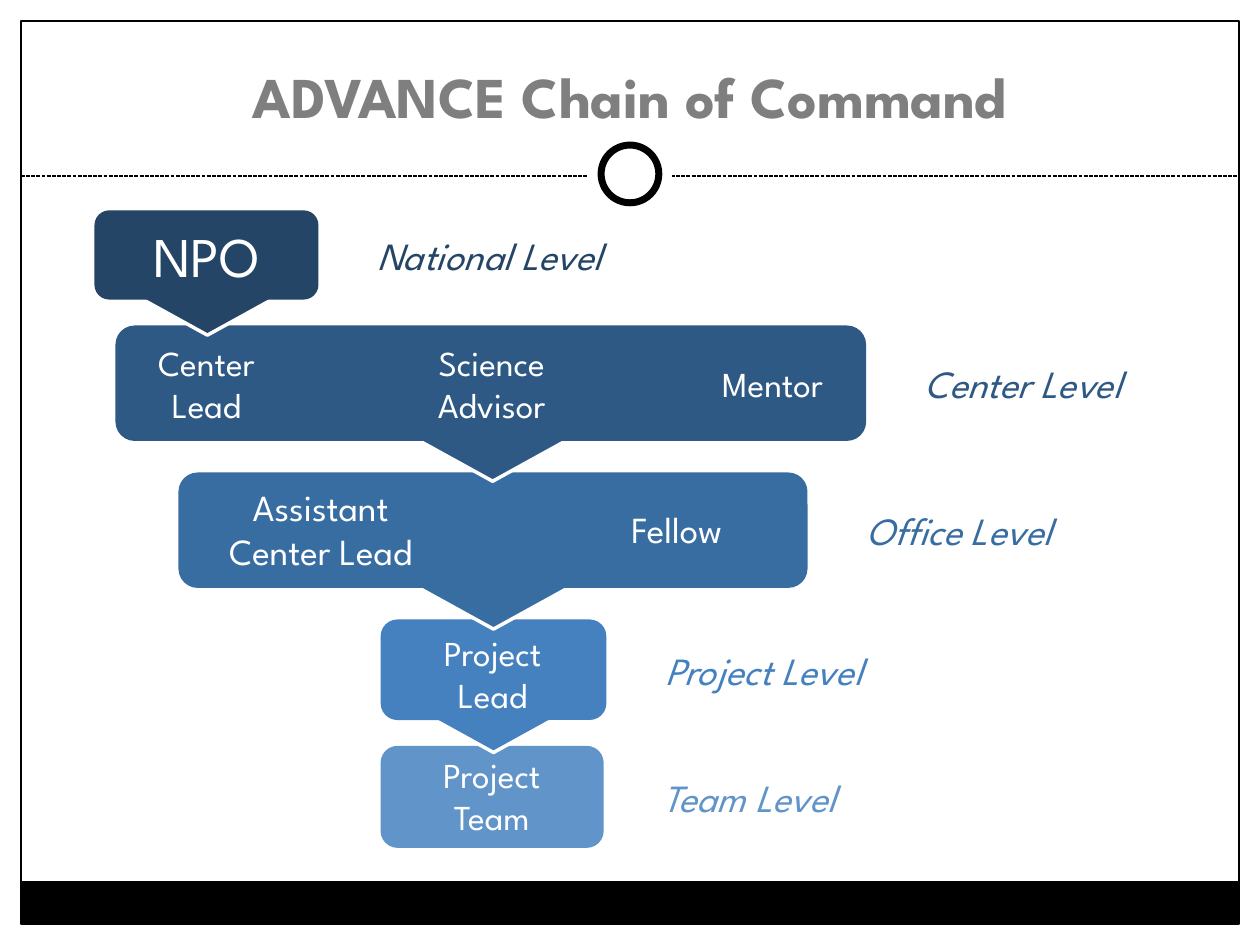
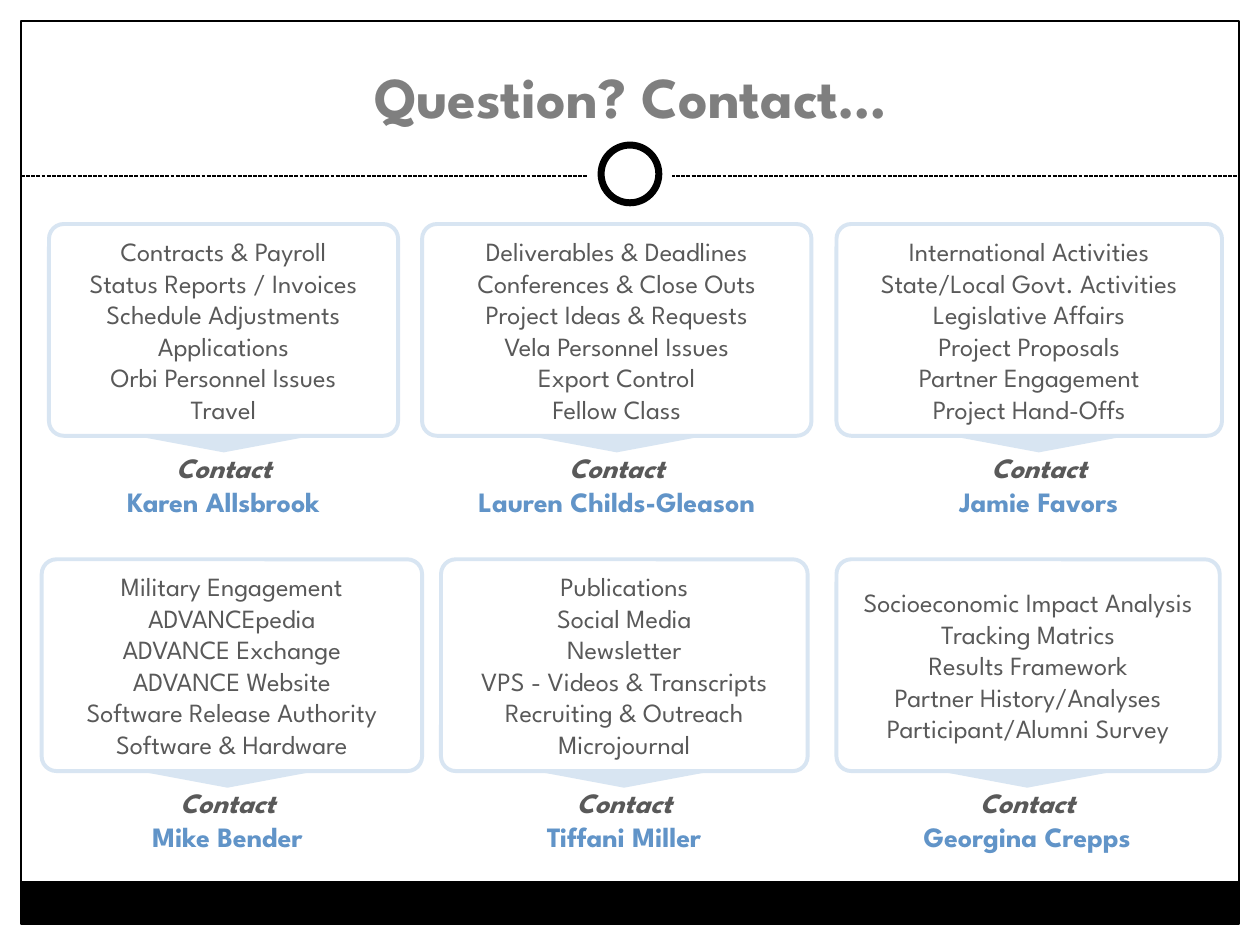
from pptx import Presentation
from pptx.dml.color import RGBColor
from pptx.enum.dml import MSO_LINE
from pptx.enum.shapes import MSO_CONNECTOR, MSO_SHAPE as Preset
from pptx.enum.text import MSO_ANCHOR as Anchor, PP_ALIGN as Align
from pptx.oxml.ns import qn
from pptx.util import Pt
from lxml.etree import SubElement

FONT = "League Spartan"
WHITE, BLACK = RGBColor(255, 255, 255), RGBColor(0, 0, 0)
TITLE_GREY, TEXT_GREY = RGBColor(0x7F, 0x7F, 0x7F), RGBColor(0x59, 0x59, 0x59)
NAVY, DEEP = RGBColor(0x24, 0x45, 0x66), RGBColor(0x2E, 0x59, 0x84)
MID, BRIGHT = RGBColor(0x38, 0x6D, 0xA2), RGBColor(0x44, 0x81, 0xBE)
SOFT, PALE = RGBColor(0x61, 0x94, 0xC8), RGBColor(0xD8, 0xE5, 0xF2)
WIDTH, HEIGHT, MARGIN = 720, 540, 12

# Content: box is (left, top, width, height), pointer is (centre, top),
# a role is (text, left, width)
CHAIN_TITLE = "ADVANCE Chain of Command"
LEVELS = [
    dict(label="National Level", colour=NAVY, box=(54, 120.2, 128, 51),
         pointer=(118.5, 162), size=32, middle=145.5, roles=[("NPO", 66, 104)]),
    dict(label="Center Level", colour=DEEP, box=(66, 186, 429, 66),
         pointer=(281.5, 245.5), size=20, middle=219,
         roles=[("Center Lead", 66, 104), ("Science Advisor", 229, 104),
                ("Mentor", 389.5, 104)]),
    dict(label="Office Level", colour=MID, box=(102, 270, 359.5, 66),
         pointer=(282, 330), size=21, middle=302,
         roles=[("Assistant Center Lead", 108, 150.5), ("Fellow", 311.5, 150.5)]),
    dict(label="Project Level", colour=BRIGHT, box=(217.5, 354, 129, 57.5),
         pointer=(282, 400.5), size=20, middle=385,
         roles=[("Project Lead", 229.5, 104)]),
    dict(label="Team Level", colour=SOFT, box=(217.5, 426.2, 127.5, 58.3),
         pointer=None, size=20, middle=454.7, roles=[("Project Team", 229, 104)]),
]

# A card is (contact, left, width, pointer centre, topics)
CONTACT_TITLE = "Question? Contact…"
CARD_ROWS = [
    [("Karen Allsbrook", 28, 199.5, 127.8,
      ["Contracts & Payroll", "Status Reports / Invoices", "Schedule Adjustments",
       "Applications", "Orbi Personnel Issues", "Travel"]),
     ("Lauren Childs-Gleason", 241.2, 222.5, 352.4,
      ["Deliverables & Deadlines", "Conferences & Close Outs",
       "Project Ideas & Requests", "Vela Personnel Issues", "Export Control",
       "Fellow Class"]),
     ("Jamie Favors", 478, 220.3, 593.6,
      ["International Activities", "State/Local Govt. Activities",
       "Legislative Affairs", "Project Proposals", "Partner Engagement",
       "Project Hand-Offs"])],
    [("Mike Bender", 23.8, 217.4, 130,
      ["Military Engagement", "ADVANCEpedia", "ADVANCE Exchange", "ADVANCE Website",
       "Software Release Authority", "Software & Hardware"]),
     ("Tiffani Miller", 252, 209.5, 356.6,
      ["Publications", "Social Media", "Newsletter", "VPS - Videos & Transcripts",
       "Recruiting & Outreach", "Microjournal"]),
     ("Georgina Crepps", 478, 219, 587,
      ["Socioeconomic Impact Analysis", "Tracking Matrics", "Results Framework",
       "Partner History/Analyses", "Participant/Alumni Survey"])],
]
LABEL_GAP = 26.5
CARD_TOP, CARD_HEIGHT, ROW_PITCH = 128, 121, 191.6


def write(frame, lines, size, colour, align=Align.CENTER, bold=False, italic=False):
    """Add each line as a paragraph; a line may be (text, colour, italic)."""
    for number, line in enumerate(lines):
        text, ink, slant = line if isinstance(line, tuple) else (line, colour, italic)
        paragraph = frame.add_paragraph() if number else frame.paragraphs[0]
        paragraph.alignment = align
        run = paragraph.add_run()
        run.text = text
        font = run.font
        font.name, font.size, font.bold, font.italic = FONT, Pt(size), bold, slant
        font.color.rgb = ink


def add_preset(slide, preset, box, fill=None, line=None, weight=0.75):
    shape = slide.shapes.add_shape(preset, *map(Pt, box))
    shape.shadow.inherit = False
    if fill is None:
        shape.fill.background()
    else:
        shape.fill.solid()
        shape.fill.fore_color.rgb = fill
    if line is None:
        shape.line.fill.background()
    else:
        shape.line.color.rgb = line
        shape.line.width = Pt(weight)
    return shape


def add_pointer(slide, centre, top, width, height, fill, **outline):
    box = (centre - width / 2, top, width, height)
    add_preset(slide, Preset.ISOSCELES_TRIANGLE, box, fill, **outline).rotation = 180


def add_text(slide, box, lines, size, colour, anchor=Anchor.MIDDLE, wrap=True, **style):
    frame = slide.shapes.add_textbox(*map(Pt, box)).text_frame
    frame.word_wrap, frame.vertical_anchor = wrap, anchor
    write(frame, lines, size, colour, **style)


def add_frame(slide):
    """Draw the border, footer band, dashed rule and ring on the slide's layout."""
    inner = WIDTH - 2 * MARGIN
    parts = [
        add_preset(slide, Preset.RECTANGLE, (MARGIN, 503.5, inner, 24.5), BLACK),
        add_preset(slide, Preset.RECTANGLE,
                   (MARGIN, MARGIN, inner, HEIGHT - 2 * MARGIN), line=BLACK),
    ]
    rule = slide.shapes.add_connector(MSO_CONNECTOR.STRAIGHT, Pt(MARGIN), Pt(100.6),
                                      Pt(WIDTH - MARGIN), Pt(100.6))
    rule.line.color.rgb, rule.line.width = BLACK, Pt(0.75)
    rule.line.dash_style = MSO_LINE.SQUARE_DOT
    SubElement(rule.element.spPr, qn("a:effectLst"))
    parts.append(rule)
    for diameter, outline in ((48, None), (33, BLACK)):
        box = ((WIDTH - diameter) / 2, 99.4 - diameter / 2, diameter, diameter)
        parts.append(add_preset(slide, Preset.OVAL, box, WHITE, outline, 4))
    layout_tree = slide.slide_layout.shapes.element
    for part in parts:
        layout_tree.append(part.element)


def add_slide(deck, heading):
    slide = deck.slides.add_slide(deck.slide_layouts[5])
    title = slide.shapes.title
    title.left, title.top, title.width, title.height = map(Pt, (24, 18, 672, 60))
    title.text_frame.vertical_anchor = Anchor.BOTTOM
    write(title.text_frame, [heading], 33, TITLE_GREY, bold=True)
    return slide


def add_level(slide, level):
    left, top, width, height = level["box"]
    colour = level["colour"]
    add_text(slide, (left + width + LABEL_GAP, top + height / 2 - 17, 180, 34),
             [level["label"]], 22, colour, align=Align.LEFT, italic=True)
    if level["pointer"]:
        add_pointer(slide, *level["pointer"], 107, 29.5, colour, line=WHITE, weight=2)
    add_preset(slide, Preset.ROUNDED_RECTANGLE, level["box"], colour)
    for role, role_left, role_width in level["roles"]:
        add_text(slide, (role_left, level["middle"] - 28, role_width, 56),
                 [role], level["size"], WHITE)


def add_card(slide, top, contact, left, width, centre, topics):
    bottom = top + CARD_HEIGHT
    add_pointer(slide, centre, bottom, 101.5, 9.5, PALE)
    card = add_preset(slide, Preset.ROUNDED_RECTANGLE,
                      (left, top, width, CARD_HEIGHT), WHITE, PALE, 2.25)
    card.adjustments[0] = 0.07
    card.text_frame.word_wrap, card.text_frame.vertical_anchor = True, Anchor.MIDDLE
    write(card.text_frame, topics, 15, TEXT_GREY)
    add_text(slide, (centre - 96, bottom + 5, 192, 46),
             [("Contact", TEXT_GREY, True), (contact, SOFT, False)], 16, TEXT_GREY,
             anchor=Anchor.TOP, wrap=False, bold=True)


def main():
    deck = Presentation()
    deck.slide_width, deck.slide_height = Pt(WIDTH), Pt(HEIGHT)

    # Chain of command, lowest level first so each pointer overlaps the next box
    chain = add_slide(deck, CHAIN_TITLE)
    add_frame(chain)
    for level in reversed(LEVELS):
        add_level(chain, level)

    # Contact cards
    contacts = add_slide(deck, CONTACT_TITLE)
    for number, row in enumerate(CARD_ROWS):
        for card in row:
            add_card(contacts, CARD_TOP + number * ROW_PITCH, *card)

    deck.save("out.pptx")


if __name__ == "__main__":
    main()
